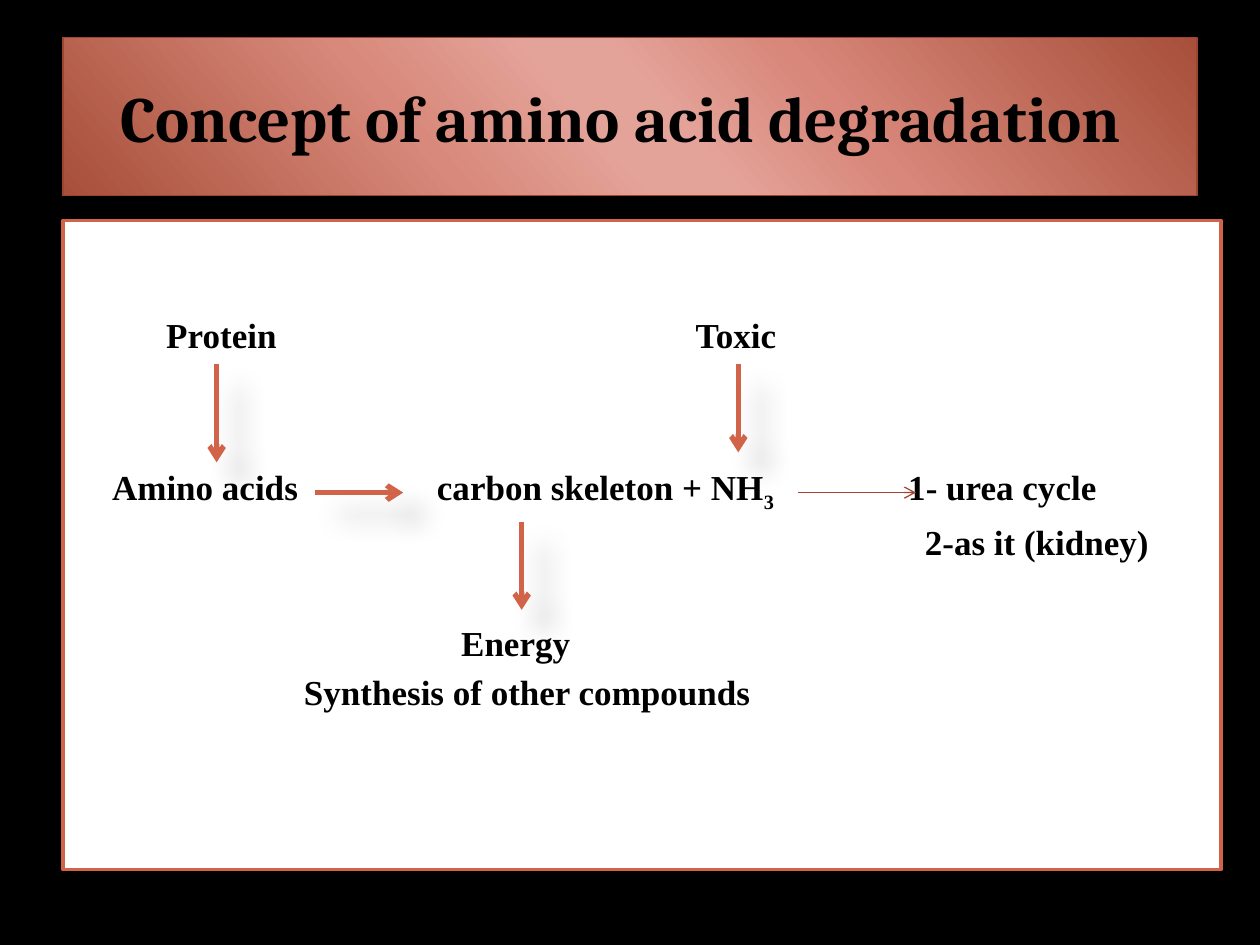
from pptx import Presentation
from pptx.dml.color import RGBColor as RGB
from pptx.enum.shapes import MSO_CONNECTOR as LINK, MSO_SHAPE as SHAPE
from pptx.enum.text import MSO_ANCHOR as ANCHOR, PP_ALIGN as ALIGN
from pptx.oxml.ns import qn
from pptx.util import Pt
from lxml.etree import SubElement as Sub

COLORS = {"black": "000000", "white": "FFFFFF", "orange": "D16349",
          "rust": "9D4530", "dark": "A74F3A", "rose": "D8877A",
          "pale": "E4A399", "blush": "D8897B"}
RGBS = {name: RGB.from_string(code) for name, code in COLORS.items()}


def style_line(item, color, width):
    item.line.color.rgb = RGBS[color]
    item.line.width = Pt(width)


def add_shade(item, deep):
    """Set the effects of an item: a soft shadow, or none."""
    prop = item._element.spPr
    for old in prop.findall(qn("a:effectLst")):
        prop.remove(old)
    list_ = Sub(prop, qn("a:effectLst"))
    if deep:
        shade = Sub(list_, qn("a:outerShdw"), blurRad=str(Pt(15)),
                    dist=str(Pt(18)), dir=str(45 * 60000), rotWithShape="0")
        tint = Sub(shade, qn("a:srgbClr"), val=COLORS["black"])
        Sub(tint, qn("a:alpha"), val="26000")


deck = Presentation()
deck.slide_width, deck.slide_height = Pt(720), Pt(540)
slide = deck.slides.add_slide(deck.slide_layouts[6])
slide.background.fill.solid()
slide.background.fill.fore_color.rgb = RGBS["black"]
shapes = slide.shapes

# Title band with a six-stop gradient
title = shapes.add_shape(SHAPE.RECTANGLE, Pt(36), Pt(21.6), Pt(648), Pt(90))
title.fill.gradient()
grad = title._element.spPr.find(qn("a:gradFill"))
for part in list(grad):
    grad.remove(part)
stops = Sub(grad, qn("a:gsLst"))
for place, color in [(0, "dark"), (33, "rose"), (47, "pale"),
                     (53, "pale"), (68, "blush"), (100, "dark")]:
    stop = Sub(stops, qn("a:gs"), pos=str(place * 1000))
    Sub(stop, qn("a:srgbClr"), val=COLORS[color])
Sub(grad, qn("a:lin"), ang=str(139 * 60000), scaled="0")
style_line(title, "rust", 0.75)
add_shade(title, True)
frame = title.text_frame
frame.word_wrap = True
frame.vertical_anchor = ANCHOR.MIDDLE
frame.margin_right = Pt(17.5)
frame.text = "Concept of amino acid degradation"
head = frame.paragraphs[0]
head.alignment = ALIGN.CENTER
font = head.runs[0].font
font.name, font.size, font.bold = "Cambria", Pt(36.9), True
font.color.rgb = RGBS["black"]

# White panel
panel = shapes.add_shape(SHAPE.RECTANGLE, Pt(36), Pt(126), Pt(661.7), Pt(370.8))
panel.fill.solid()
panel.fill.fore_color.rgb = RGBS["white"]
style_line(panel, "orange", 2)
add_shade(panel, False)
frame = panel.text_frame
frame.word_wrap = True
frame.vertical_anchor = ANCHOR.TOP
frame.margin_left = frame.margin_right = 0
frame.margin_top = Pt(53.3)

# Panel lines: space before, tab stops, runs ("3" is the subscript)
lines = [
    (0, [59, 361.5], ["\tProtein\tToxic"]),
    (62.7, [28, 213.7, 483], ["\tAmino acids\tcarbon skeleton + NH", "3",
                              "\t1- urea cycle"]),
    (4, [492.5], ["\t2-as it (kidney)"]),
    (33.6, [227.5], ["\tEnergy"]),
    (4, [137.7], ["\tSynthesis of other compounds"]),
]
for row, (gap, tabs, texts) in enumerate(lines):
    para = frame.add_paragraph() if row else frame.paragraphs[0]
    tab_list = Sub(para._p.get_or_add_pPr(), qn("a:tabLst"))
    for tab in tabs:
        Sub(tab_list, qn("a:tab"), pos=str(Pt(tab)), algn="l")
    para.alignment = ALIGN.LEFT
    if gap:
        para.space_before = Pt(gap)
    for text in texts:
        run = para.add_run()
        run.text = text
        font = run.font
        font.name, font.size, font.bold = "Times New Roman", Pt(20), True
        font.color.rgb = RGBS["black"]
        if text == "3":
            font._element.set("baseline", "-25000")

# Arrows: start, end, colour, width
arrows = [
    (123.8, 208, 123.8, 264.2, "orange", 3),
    (421.9, 208, 421.9, 258.5, "orange", 3),
    (180, 281.5, 230.4, 281.5, "orange", 3),
    (455.8, 281.5, 523.4, 281.5, "rust", 0.75),
    (298.1, 298.1, 298.1, 348.5, "orange", 3),
]
for *ends, color, width in arrows:
    arrow = shapes.add_connector(LINK.STRAIGHT, *map(Pt, ends))
    style_line(arrow, color, width)
    Sub(arrow._element.spPr.find(qn("a:ln")), qn("a:tailEnd"), type="arrow")
    add_shade(arrow, width == 3)

deck.save("out.pptx")
